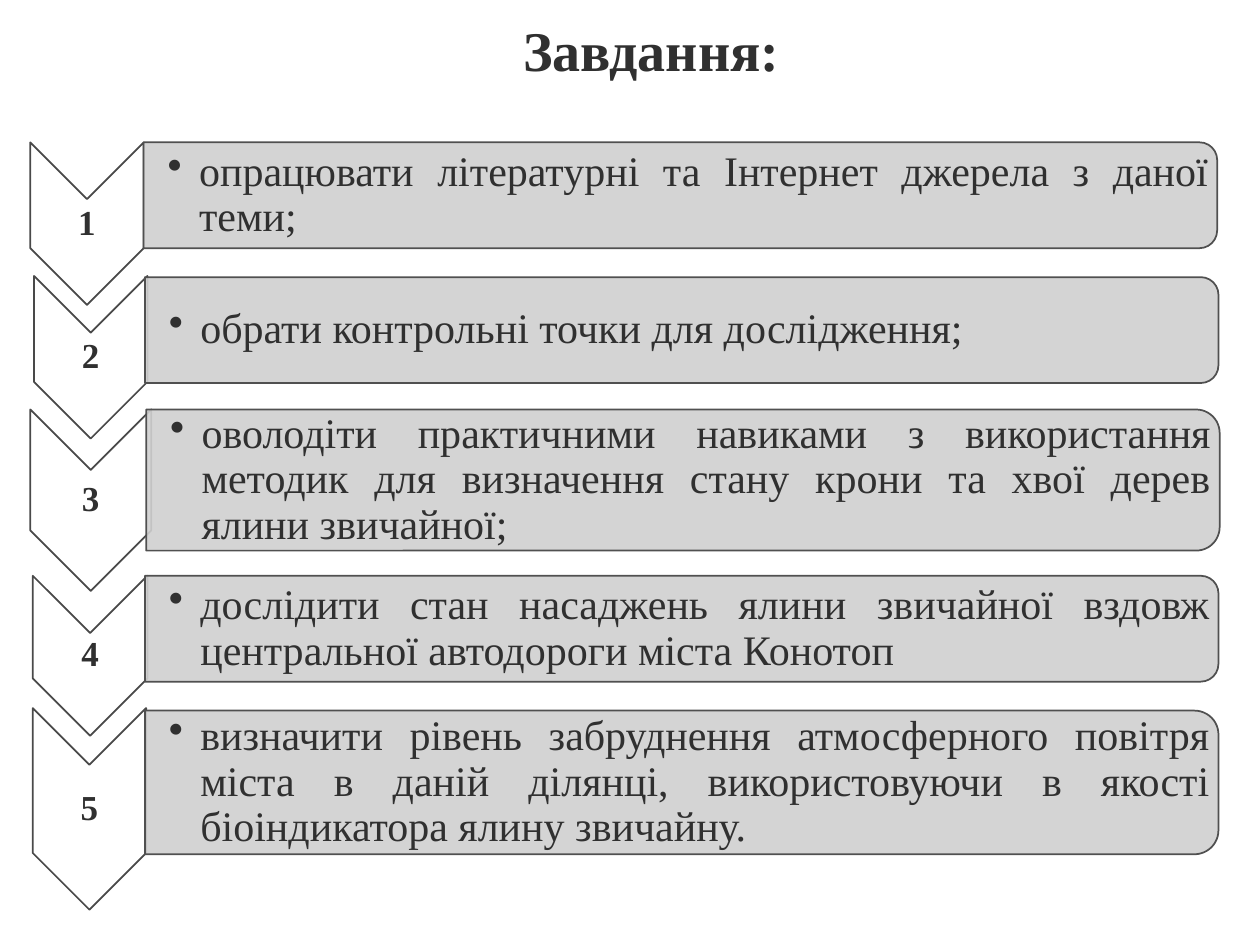
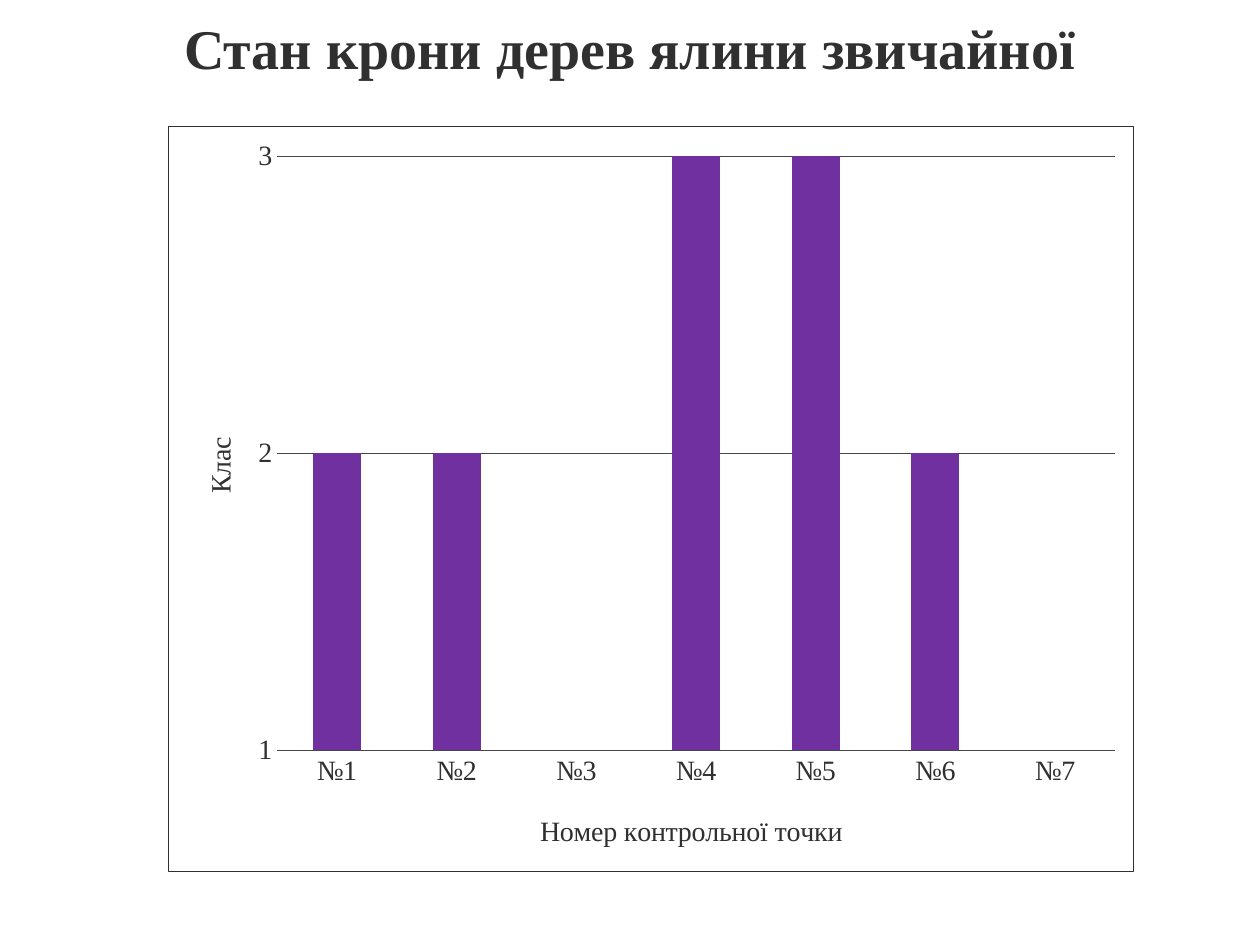
"""Builds two slides: the research tasks and the crown-condition chart."""
from lxml import etree
from pptx import Presentation
from pptx.chart.data import CategoryChartData
from pptx.dml.color import RGBColor
from pptx.enum.chart import XL_CHART_TYPE, XL_TICK_MARK
from pptx.enum.shapes import MSO_SHAPE
from pptx.enum.text import MSO_ANCHOR, PP_ALIGN
from pptx.oxml import parse_xml
from pptx.oxml.ns import nsdecls, qn
from pptx.util import Pt

PX = 9144
FONT = "Times New Roman"
INK, WHITE, PANEL, PURPLE = "303030", "FFFFFF", "D0D0D0", "7030A0"
CHEVRON_EDGE, PANEL_EDGE, GRID = "494949", "505050", "474747"
CHEVRON, ROUNDED_END = MSO_SHAPE.CHEVRON, MSO_SHAPE.ROUND_2_SAME_RECTANGLE
CENTER, JUSTIFY = PP_ALIGN.CENTER, PP_ALIGN.JUSTIFY
MIDDLE = MSO_ANCHOR.MIDDLE
COLUMNS, NO_TICKS = XL_CHART_TYPE.COLUMN_CLUSTERED, XL_TICK_MARK.NONE

TASKS = [
    ("опрацювати літературні та Інтернет джерела з даної теми;",
     (24, 113, 90, 129), (114, 113, 84)),
    ("обрати контрольні точки для дослідження;",
     (27, 219, 90, 129), (115, 220, 84)),
    ("оволодіти практичними навиками з використання методик для визначення "
     "стану крони та хвої дерев ялини звичайної;",
     (24, 325, 96, 144), (116, 325, 112)),
    ("дослідити стан насаджень ялини звичайної вздовж центральної автодороги "
     "міста Конотоп",
     (26, 457, 91, 127), (115, 457, 84)),
    ("визначити рівень забруднення атмосферного повітря міста в даній ділянці, "
     "використовуючи в якості біоіндикатора ялину звичайну.",
     (26, 562, 90, 160), (115, 564, 114)),
]
PANEL_WIDTH, PANEL_TEXT_WIDTH, PANEL_TEXT_MARGIN = 852, 847, 5
CROWN_CLASSES = {"№1": 2, "№2": 2, "№3": 1, "№4": 3, "№5": 3, "№6": 2, "№7": 1}


def rgb(value):
    """Turn a hex string into a colour."""
    return RGBColor.from_string(value)


class Deck:
    """Holds the presentation, its style and the current slide."""

    def __init__(self, width, height):
        """Start an empty presentation of the given size."""
        self.presentation = Presentation()
        self.presentation.slide_width = width * PX
        self.presentation.slide_height = height * PX
        self.slide = None

    def new_slide(self, title, x, y, w, h):
        """Add a blank slide with a title."""
        self.slide = self.presentation.slides.add_slide(
            self.presentation.slide_layouts[6])
        self.text(title, x, y, w, h, 32, bold=True, insets=(10, 5, 10, 5))

    def text(self, words, x, y, w, h, size, bold=False, align=CENTER,
             insets=(1, 1, 1, 1), spacing=1.0, bullet=False):
        """Add a wrapped, vertically centred text box."""
        frame = self.slide.shapes.add_textbox(
            x * PX, y * PX, w * PX, h * PX).text_frame
        frame.word_wrap = True
        frame.vertical_anchor = MIDDLE
        (frame.margin_left, frame.margin_top,
         frame.margin_right, frame.margin_bottom) = (i * PX for i in insets)
        frame.text = words
        paragraph = frame.paragraphs[0]
        if bullet:
            properties = paragraph._p.get_or_add_pPr()
            properties.set("marL", str(25 * PX))
            properties.set("indent", str(-25 * PX))
            etree.SubElement(properties, qn("a:buChar")).set("char", "•")
        paragraph.alignment = align
        paragraph.line_spacing = spacing
        self.style_font(paragraph.runs[0].font, size, bold)

    def style_font(self, font, size, bold=False):
        """Apply the shared typeface and ink."""
        font.name = FONT
        font.size = Pt(size)
        font.bold = bold
        font.color.rgb = rgb(INK)

    def turned_shape(self, kind, x, y, w, h, fill, edge, opacity=100):
        """Add a preset turned clockwise that covers the given visible box."""
        shape = self.slide.shapes.add_shape(
            kind, (2 * x + w - h) * PX // 2, (2 * y + h - w) * PX // 2,
            h * PX, w * PX)
        shape.rotation = 90
        shape.shadow.inherit = False
        shape.fill.solid()
        shape.fill.fore_color.rgb = rgb(fill)
        shape.line.color.rgb = rgb(edge)
        shape.line.width = Pt(1)
        if opacity < 100:
            color = shape._element.spPr.find(qn("a:solidFill"))[0]
            etree.SubElement(color, qn("a:alpha")).set("val", str(opacity * 1000))

    def place(self, part, **fractions):
        """Fix a chart part at fractions of the chart area."""
        layout = part.find(qn("c:layout"))
        if layout is None:
            layout = etree.Element(qn("c:layout"))
            part.insert(0, layout)
        manual = etree.SubElement(layout, qn("c:manualLayout"))
        if "w" in fractions:
            etree.SubElement(manual, qn("c:layoutTarget")).set("val", "inner")
        for side in ("x", "y"):
            etree.SubElement(manual, qn(f"c:{side}Mode")).set("val", "edge")
        for name, value in fractions.items():
            etree.SubElement(manual, qn(f"c:{name}")).set("val", str(value))

    def axis(self, axis, title, x, y):
        """Style an axis and place its title."""
        axis.major_tick_mark = axis.minor_tick_mark = NO_TICKS
        self.style_font(axis.tick_labels.font, 16)
        axis.axis_title.text_frame.text = title
        run = axis.axis_title.text_frame.paragraphs[0].runs[0]
        self.style_font(run.font, 16)
        self.place(axis.axis_title._element, x=x, y=y)

    def column_chart(self, values, category_title, value_title, x, y, w, h):
        """Add a framed single-series column chart."""
        data = CategoryChartData()
        data.categories = list(values)
        data.add_series("Series 1", list(values.values()))
        chart = self.slide.shapes.add_chart(
            COLUMNS, x * PX, y * PX, w * PX, h * PX, data).chart
        chart.has_legend = chart.has_title = False
        self.style_font(chart.font, 16)
        plot = chart.plots[0]
        plot.gap_width = 150
        plot.vary_by_categories = False
        columns = plot.series[0].format.fill
        columns.solid()
        columns.fore_color.rgb = rgb(PURPLE)

        self.axis(chart.category_axis, category_title, 0.38, 0.915)
        self.axis(chart.value_axis, value_title, 0.03, 0.41)
        baseline = chart.category_axis.format.line
        baseline.color.rgb = rgb(GRID)
        baseline.width = Pt(1)
        scale = chart.value_axis
        scale.minimum_scale, scale.maximum_scale, scale.major_unit = 1, 3, 1
        scale.format.line.fill.background()
        grid = scale.major_gridlines.format.line
        grid.color.rgb = rgb(GRID)
        grid.width = Pt(0.75)

        area = chart._chartSpace.chart
        self.place(area.plotArea, x=0.113, y=0.04, w=0.868, h=0.798)
        area.addnext(parse_xml(
            f'<c:spPr {nsdecls("c", "a")}><a:noFill/><a:ln w="{Pt(0.75)}">'
            f'<a:solidFill><a:srgbClr val="{INK}"/></a:solidFill></a:ln></c:spPr>'))

    def task(self, number, words, chevron, panel):
        """Add a numbered chevron and its task panel."""
        x, y, w, h = chevron
        self.turned_shape(CHEVRON, x, y, w, h, WHITE, CHEVRON_EDGE)
        self.text(str(number), x, y + w // 2, w, h - w, 20, bold=True, spacing=0.9)
        x, y, h = panel
        self.turned_shape(ROUNDED_END, x, y, PANEL_WIDTH, h, PANEL, PANEL_EDGE, 90)
        self.text(words, x, y + PANEL_TEXT_MARGIN, PANEL_TEXT_WIDTH,
                  h - 2 * PANEL_TEXT_MARGIN, 24, align=JUSTIFY,
                  insets=(19, 2, 2, 2), spacing=0.9, bullet=True)


def main():
    """Build and save both slides."""
    deck = Deck(1000, 750)
    deck.new_slide("Завдання:", 117, 0, 800, 78)
    for number, (words, chevron, panel) in enumerate(TASKS, 1):
        deck.task(number, words, chevron, panel)
    deck.new_slide("Стан крони дерев ялини звичайної", 100, 8, 800, 58)
    deck.column_chart(CROWN_CLASSES, "Номер контрольної точки", "Клас",
                      133, 100, 767, 592)
    deck.presentation.save("out.pptx")


if __name__ == "__main__":
    main()
